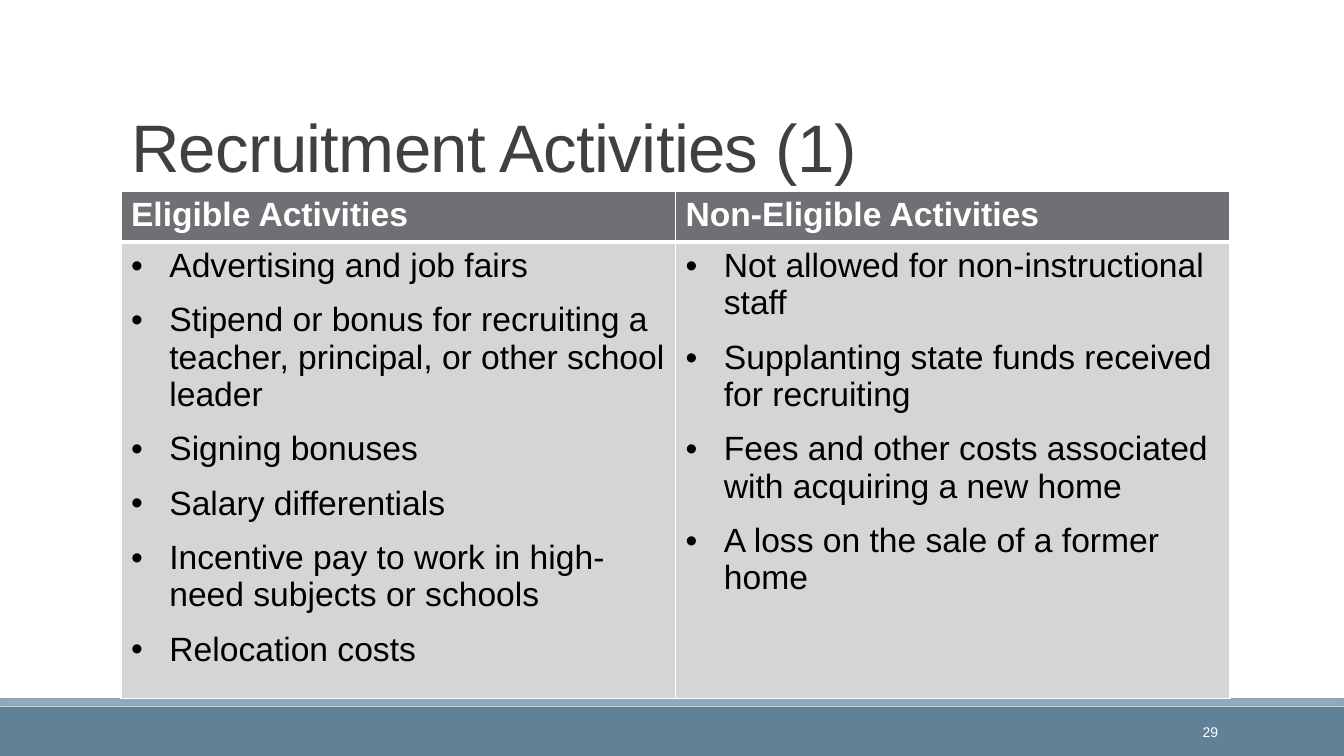
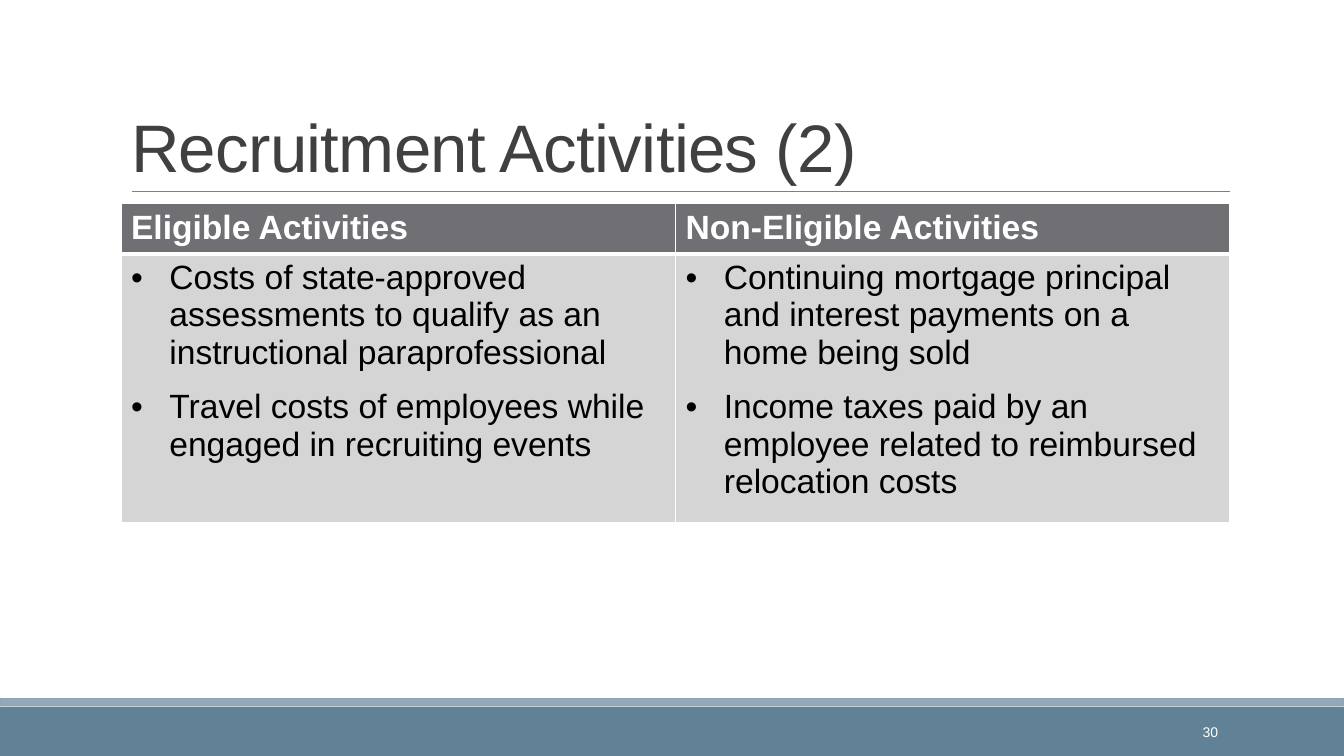
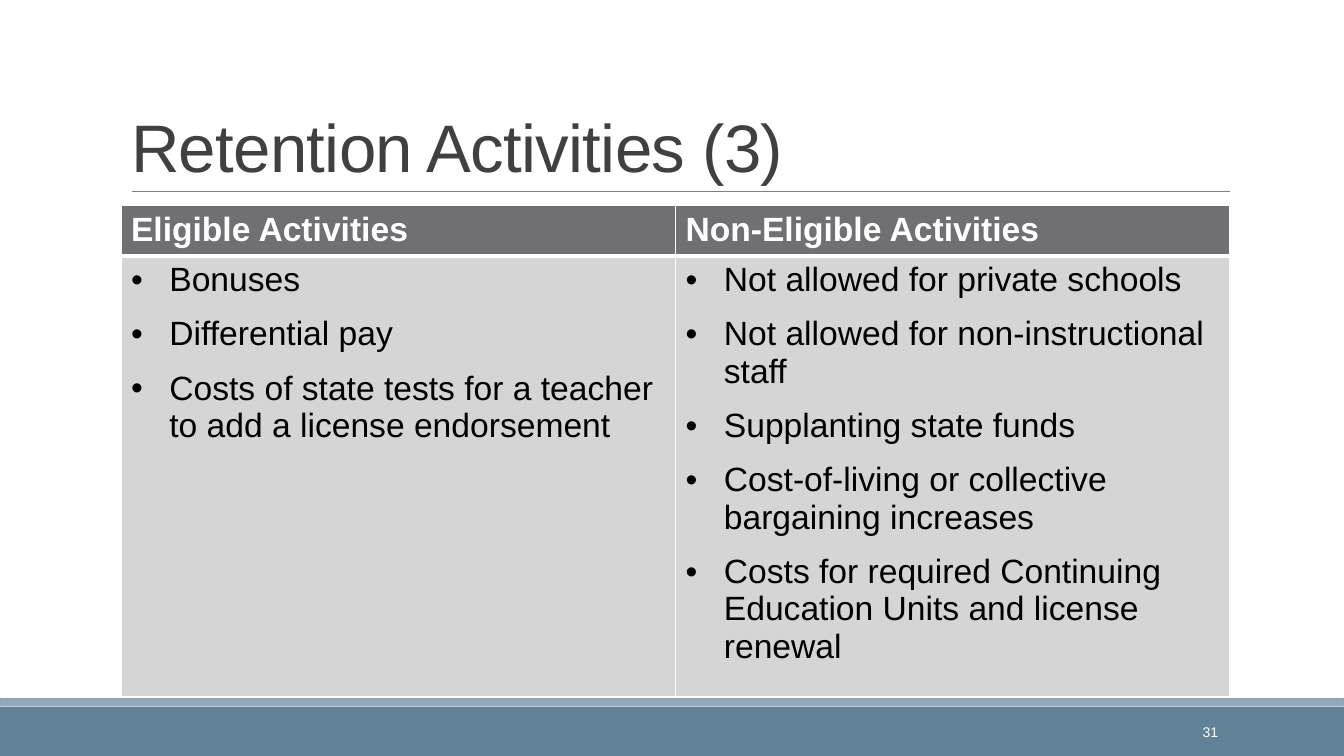
from lxml import etree
from pptx import Presentation
from pptx.dml.color import RGBColor
from pptx.enum.shapes import MSO_CONNECTOR as Connector, MSO_SHAPE as Shape
from pptx.enum.text import MSO_ANCHOR as Anchor, MSO_AUTO_SIZE as AutoSize, PP_ALIGN as Align
from pptx.oxml.ns import qn
from pptx.util import Inches, Pt

FONT = "Arial"
COLORS = {
    "white": "FFFFFF",
    "black": "000000",
    "title": "404040",
    "rule": "808080",
    "footer": "618197",
    "strip": "92A9B9",
    "strip_edge": "8FA3B6",
    "header": "6F6F74",
    "body": "D5D5D6",
}
LEFT, WIDTH = 1.2, 11
HEADER_HEIGHT = 0.46
HEADINGS = ("Eligible Activities", "Non-Eligible Activities")
FIRST_NUMBER = 29

# title, table top, body row height, bullets of the two columns
PAGES = [
    ("Recruitment Activities (1)", 1.9, 4.25,
     ["Advertising and job fairs",
      "Stipend or bonus for recruiting a teacher, principal, or other school leader",
      "Signing bonuses",
      "Salary differentials",
      "Incentive pay to work in high-need subjects or schools",
      "Relocation costs"],
     ["Not allowed for non-instructional staff",
      "Supplanting state funds received for recruiting",
      "Fees and other costs associated with acquiring a new home",
      "A loss on the sale of a former home"]),
    ("Recruitment Activities (2)", 2.02, 2.45,
     ["Costs of state-approved assessments to qualify as an instructional paraprofessional",
      "Travel costs of employees while engaged in recruiting events"],
     ["Continuing mortgage principal and interest payments on a home being sold",
      "Income taxes paid by an employee related to reimbursed relocation costs"]),
    ("Retention Activities (3)", 2.04, 4.05,
     ["Bonuses",
      "Differential pay",
      "Costs of state tests for a teacher to add a license endorsement"],
     ["Not allowed for private schools",
      "Not allowed for non-instructional staff",
      "Supplanting state funds",
      "Cost-of-living or collective bargaining increases",
      "Costs for required Continuing Education Units and license renewal"]),
]


def rgb(name):
    return RGBColor.from_string(COLORS[name])


def set_border(cell, side, width):
    """Draw a white border on one side (L, R, T or B) of a cell."""
    line = etree.SubElement(cell._tc.get_or_add_tcPr(), qn("a:ln" + side), w=str(Pt(width)))
    fill = etree.SubElement(line, qn("a:solidFill"))
    etree.SubElement(fill, qn("a:srgbClr"), val=COLORS["white"])


def make_bullet(para):
    indent = Inches(0.38)
    properties = para._p.get_or_add_pPr()
    properties.set("marL", str(indent))
    properties.set("indent", str(-indent))
    para.space_after = Pt(12)
    etree.SubElement(properties, qn("a:buFont"), typeface=FONT)
    etree.SubElement(properties, qn("a:buChar"), char="•")


class ActivityDeck:
    def __init__(self):
        self.deck = Presentation()
        self.deck.slide_width, self.deck.slide_height = Inches(13.33), Inches(7.5)
        self.page = None

    def add_page(self, title, number):
        self.page = self.deck.slides.add_slide(self.deck.slide_layouts[5])
        self.add_band(7.01, 0.49, "footer")
        self.add_band(6.93, 0.07, "strip", "strip_edge")
        self.add_rule()
        self.add_title(title)
        self.add_number(number)

    def add_span(self, para, text, size, color, bold=False):
        span = para.add_run()
        span.text = text
        span.font.name, span.font.size, span.font.bold = FONT, Pt(size), bold
        span.font.color.rgb = rgb(color)
        return span

    def add_band(self, top, height, fill, edge=None):
        band = self.page.shapes.add_shape(
            Shape.RECTANGLE, 0, Inches(top), self.deck.slide_width, Inches(height))
        band.shadow.inherit = False
        band.fill.solid()
        band.fill.fore_color.rgb = rgb(fill)
        if edge:
            band.line.color.rgb = rgb(edge)
            band.line.width = Pt(1.25)
        else:
            band.line.fill.background()

    def add_rule(self):
        y = Inches(1.9)
        rule = self.page.shapes.add_connector(
            Connector.STRAIGHT, Inches(1.31), y, Inches(12.2), y)
        rule.line.color.rgb = rgb("rule")
        rule.line.width = Pt(0.5)
        etree.SubElement(rule._element.spPr, qn("a:effectLst"))

    def add_title(self, text):
        title = self.page.shapes.title
        title.left, title.top = Inches(LEFT), Inches(0.31)
        title.width, title.height = Inches(WIDTH), Inches(1.59)
        frame = title.text_frame
        frame.word_wrap, frame.auto_size = True, AutoSize.NONE
        frame.vertical_anchor = Anchor.BOTTOM
        para = frame.paragraphs[0]
        para.alignment, para.line_spacing = Align.LEFT, 0.85
        span = self.add_span(para, text, 48, "title")
        span.font._element.set("spc", "-50")

    def add_number(self, number):
        box = self.page.shapes.add_textbox(
            Inches(10.74), Inches(7.06), Inches(1.44), Inches(0.4))
        frame = box.text_frame
        frame.word_wrap, frame.vertical_anchor = True, Anchor.MIDDLE
        para = frame.paragraphs[0]
        para.alignment = Align.RIGHT
        self.add_span(para, str(number), 10, "white")

    def add_table(self, top, body_height, columns):
        frame = self.page.shapes.add_table(
            2, len(columns), Inches(LEFT), Inches(top),
            Inches(WIDTH), Inches(HEADER_HEIGHT + body_height))
        table = frame.table
        table.horz_banding = False
        table.rows[0].height = Inches(HEADER_HEIGHT)
        table.rows[1].height = Inches(body_height)
        for index, (heading, bullets) in enumerate(zip(HEADINGS, columns)):
            header, body = table.cell(0, index), table.cell(1, index)
            self.style_cell(header, "header", top=1, bottom=3)
            self.style_cell(body, "body", top=3, bottom=1)
            self.add_span(header.text_frame.paragraphs[0], heading, 24, "white", bold=True)
            self.add_bullets(body.text_frame, bullets)

    def style_cell(self, cell, fill, top, bottom):
        for side, width in zip("LRTB", (1, 1, top, bottom)):
            set_border(cell, side, width)
        cell.fill.solid()
        cell.fill.fore_color.rgb = rgb(fill)

    def add_bullets(self, frame, bullets):
        for index, text in enumerate(bullets):
            para = frame.add_paragraph() if index else frame.paragraphs[0]
            make_bullet(para)
            self.add_span(para, text, 24, "black")


def main():
    activities = ActivityDeck()
    for number, (title, top, body_height, *columns) in enumerate(PAGES, FIRST_NUMBER):
        activities.add_page(title, number)
        activities.add_table(top, body_height, columns)
    activities.deck.save("out.pptx")


if __name__ == "__main__":
    main()
